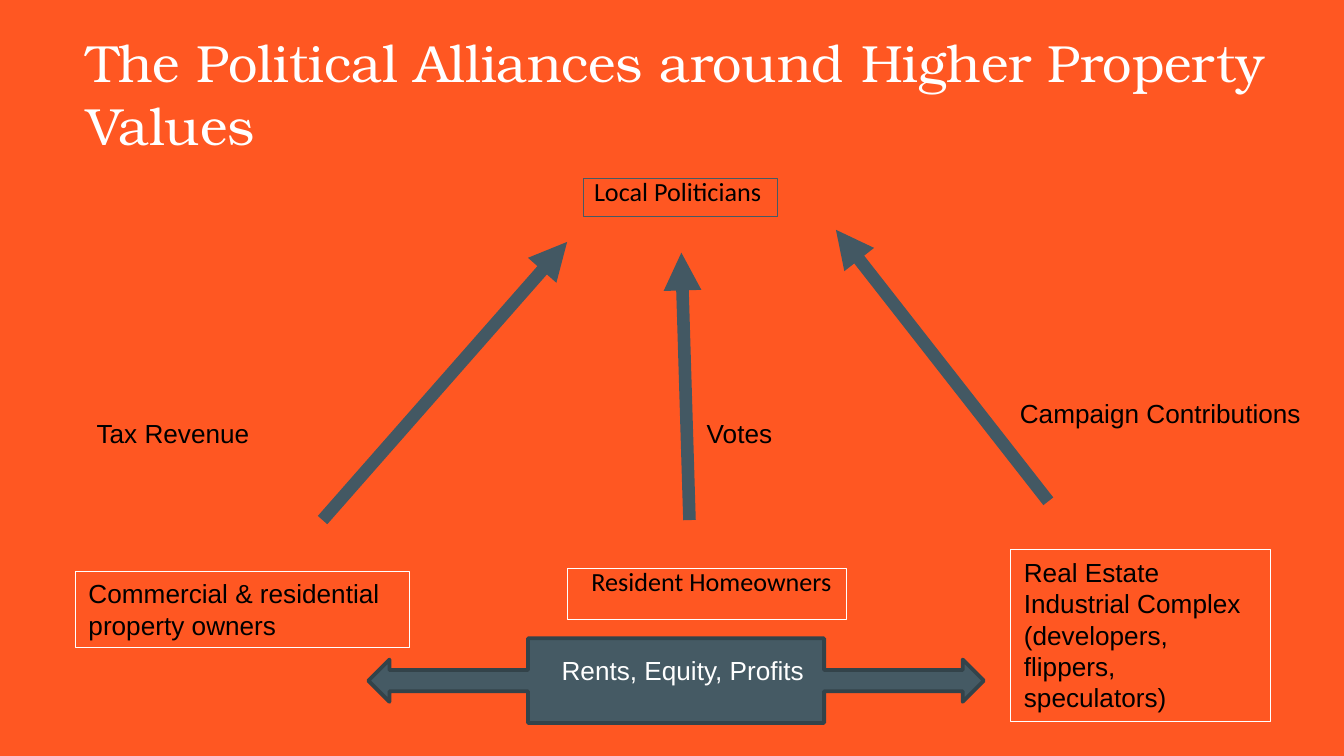
from dataclasses import dataclass

from lxml import etree
from pptx import Presentation
from pptx.dml.color import RGBColor
from pptx.enum.shapes import MSO_CONNECTOR as Connector, MSO_SHAPE as Shape
from pptx.enum.text import MSO_ANCHOR as Anchor, MSO_AUTO_SIZE as AutoSize, PP_ALIGN as Align
from pptx.oxml.ns import qn
from pptx.util import Inches, Pt


@dataclass(frozen=True)
class Theme:
    background: str = "FF5722"
    ink: str = "000000"
    light: str = "FFFFFF"
    slate: str = "455A64"
    arrow: str = "435863"
    callout_edge: str = "33434A"
    title_font: str = "TeX Gyre Bonum"
    body_font: str = "Arial"
    actor_font: str = "Calibri"
    title_size: int = 28
    body_size: int = 14


THEME = Theme()

# Places are (left, top, width, height) in cells of a 100 by 56.25 grid (16:9).
COLUMNS, ROWS = 100, 56.25
CELL = Inches(10) / COLUMNS

TITLE = ("The Political Alliances around Higher Property Values", (5.4, 6.2, 90.6, 1.4))

COMPACT = {"font": THEME.actor_font, "spacing": 0.9}
BOXES = [
    ("Local Politicians", (43.4, 13.3, 14.4, 2.8), THEME.slate, 0.25,
     {**COMPACT, "insets": (0.08, 0, 0, 0)}),
    ("Resident Homeowners", (42.2, 42.3, 20.8, 3.8), THEME.light, 0.25,
     {**COMPACT, "insets": (0.18, 0, 0, 0)}),
    ("Real Estate Industrial Complex (developers, flippers, speculators)",
     (75.2, 40.9, 19.3, 12.8), THEME.light, 0.25, {}),
    ("Commercial & residential property owners",
     (5.6, 42.5, 24.9, 5.7), THEME.light, 0.5, {}),
]
ARROWS = [
    ((24, 38.7), (42.2, 18)),
    ((51.3, 38.7), (50.7, 18.8)),
    ((78, 37.3), (62.2, 17.1)),
]
CALLOUT = (27.4, 47.5, 45.8, 6.3)
LABELS = [
    ("Tax Revenue", (6.2, 30.6, 23.4, 3.4), THEME.ink),
    ("Votes", (51.6, 30.6, 8.8, 3.4), THEME.ink),
    ("Campaign Contributions", (74.9, 29.1, 24.4, 5.7), THEME.ink),
    ("Rents, Equity, Profits", (40.8, 48.2, 20.5, 3.4), THEME.light),
]


def color(value):
    return RGBColor.from_string(value)


def cells(*values):
    return [round(value * CELL) for value in values]


def write(shape, text, font=THEME.body_font, size=THEME.body_size, ink=THEME.ink,
          insets=(0.1, 0.05, 0.1, 0.05), spacing=1.0, anchor=Anchor.TOP):
    frame = shape.text_frame
    frame.word_wrap = True
    frame.auto_size = AutoSize.NONE
    frame.vertical_anchor = anchor
    (frame.margin_left, frame.margin_top,
     frame.margin_right, frame.margin_bottom) = map(Inches, insets)
    paragraph = frame.paragraphs[0]
    paragraph.alignment = Align.LEFT
    paragraph.line_spacing = spacing
    run = paragraph.add_run()
    run.text = text
    run.font.name = font
    run.font.size = Pt(size)
    run.font.color.rgb = color(ink)


def add_shape(slide, kind, place, edge, weight, fill=None):
    shape = slide.shapes.add_shape(kind, *cells(*place))
    shape.shadow.inherit = False
    if fill:
        shape.fill.solid()
        shape.fill.fore_color.rgb = color(fill)
    else:
        shape.fill.background()
    shape.line.color.rgb = color(edge)
    shape.line.width = Pt(weight)
    return shape


def add_arrow(slide, start, end):
    arrow = slide.shapes.add_connector(Connector.STRAIGHT, *cells(*start, *end))
    arrow.line.color.rgb = color(THEME.arrow)
    arrow.line.width = Pt(6.75)
    properties = arrow.line._get_or_add_ln()
    etree.SubElement(properties, qn("a:tailEnd"), type="triangle")
    etree.SubElement(arrow._element.spPr, qn("a:effectLst"))


def main():
    presentation = Presentation()
    presentation.slide_width, presentation.slide_height = cells(COLUMNS, ROWS)
    slide = presentation.slides.add_slide(presentation.slide_layouts[5])
    slide.background.fill.solid()
    slide.background.fill.fore_color.rgb = color(THEME.background)

    text, place = TITLE
    title = slide.shapes.title
    title.left, title.top, title.width, title.height = cells(*place)
    write(title, text, font=THEME.title_font, size=THEME.title_size, ink=THEME.light,
          insets=(0.1,) * 4, anchor=Anchor.MIDDLE)

    for text, place, edge, weight, text_format in BOXES:
        write(add_shape(slide, Shape.RECTANGLE, place, edge, weight), text, **text_format)
    for start, end in ARROWS:
        add_arrow(slide, start, end)
    add_shape(slide, Shape.LEFT_RIGHT_ARROW_CALLOUT, CALLOUT,
              THEME.callout_edge, 2, fill=THEME.slate)
    for text, place, ink in LABELS:
        write(slide.shapes.add_textbox(*cells(*place)), text, ink=ink)

    presentation.save("out.pptx")


if __name__ == "__main__":
    main()
